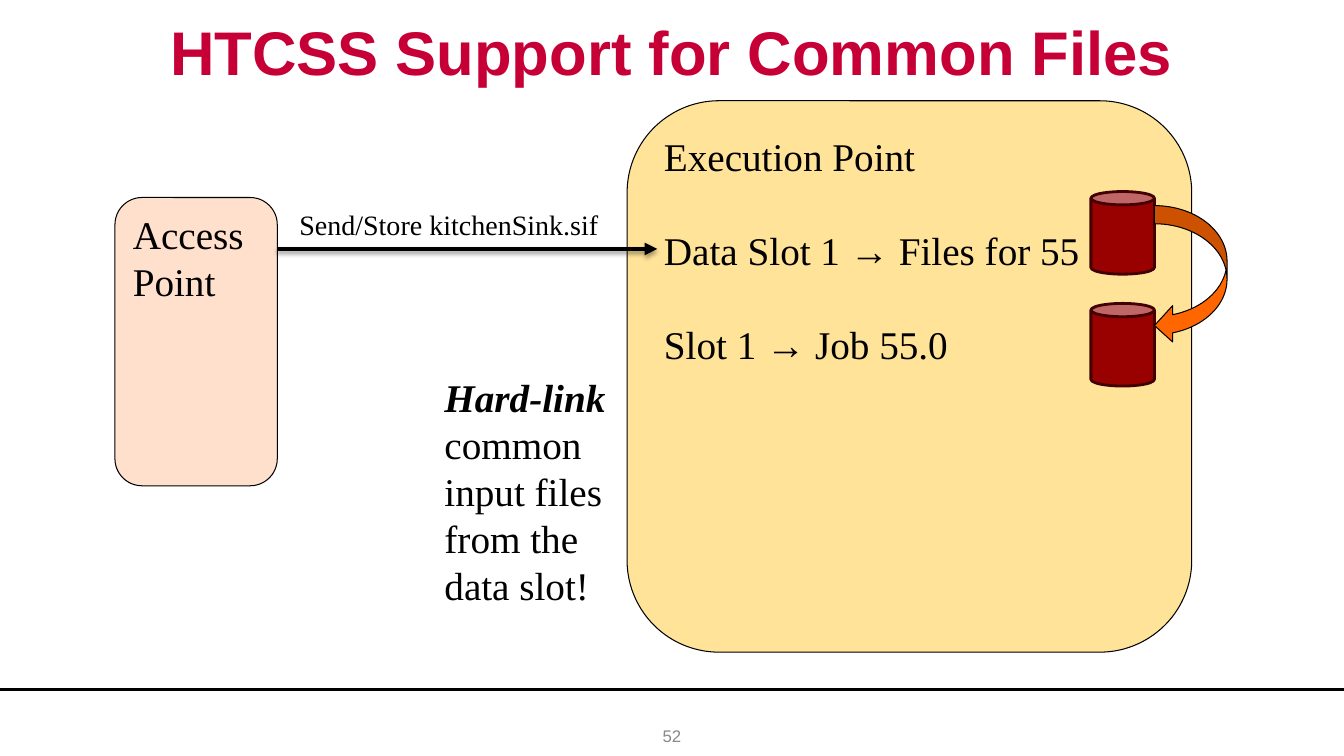
import pptx
import pptx.util
import pptx.dml.color
import pptx.enum.shapes
import pptx.enum.text
import pptx.oxml
import pptx.oxml.ns

Inches = pptx.util.Inches
Pt = pptx.util.Pt
SHAPE = pptx.enum.shapes.MSO_SHAPE
ALIGN = pptx.enum.text.PP_ALIGN
ANCHOR = pptx.enum.text.MSO_ANCHOR

COLORS = {
    "ink": "000000",
    "title": "C60036",
    "number": "898989",
    "access": "FFE0CC",
    "execution": "FFE399",
    "disk": "990000",
    "disk_edge": "430000",
    "link": "FF6600",
}
BODY_LEADING = 1.2


def color(name):
    return pptx.dml.color.RGBColor.from_string(COLORS[name])


def write(frame, paragraphs, size=28, font="Times New Roman", ink="ink", align=ALIGN.LEFT,
          anchor=ANCHOR.TOP, wrap=True, leading=None, gap=0, bold_first=False, bold=False):
    """Fill a text frame; a newline inside a paragraph becomes a line break."""
    frame.word_wrap = wrap
    frame.vertical_anchor = anchor
    for index, text in enumerate(paragraphs):
        paragraph = frame.add_paragraph() if index else frame.paragraphs[0]
        paragraph.text = text
        paragraph.alignment = align
        if leading:
            paragraph.line_spacing = Pt(size * leading)
        if index and gap:
            paragraph.space_before = Pt(gap)
        for run in paragraph.runs:
            lead = bold_first and index == 0
            run.font.size = Pt(size)
            run.font.name = font
            run.font.color.rgb = color(ink)
            run.font.bold = bold or lead
            run.font.italic = lead


class SlideBuilder:
    def __init__(self, slide):
        self.shapes = slide.shapes

    def text(self, left, top, width, height, paragraphs, **style):
        box = self.shapes.add_textbox(Inches(left), Inches(top), Inches(width), Inches(height))
        write(box.text_frame, paragraphs, **style)
        return box

    def shape(self, kind, left, top, width, height, fill, edge="ink", weight=0.75):
        shape = self.shapes.add_shape(
            kind, Inches(left), Inches(top), Inches(width), Inches(height))
        shape.shadow.inherit = False
        shape.fill.solid()
        shape.fill.fore_color.rgb = color(fill)
        shape.line.color.rgb = color(edge)
        shape.line.width = Pt(weight)
        return shape

    def line(self, x1, y1, x2, y2, weight, arrow=False):
        line = self.shapes.add_connector(
            pptx.enum.shapes.MSO_CONNECTOR.STRAIGHT,
            Inches(x1), Inches(y1), Inches(x2), Inches(y2))
        line.line.color.rgb = color("ink")
        line.line.width = Pt(weight)
        namespace = pptx.oxml.ns.nsdecls("a")
        shadow = ""
        if arrow:
            line.line._get_or_add_ln().append(
                pptx.oxml.parse_xml(f'<a:tailEnd {namespace} type="triangle"/>'))
            shadow = (
                f'<a:outerShdw blurRad="{Pt(3.1)}" dist="{Pt(1.8)}" dir="5400000" rotWithShape="0">'
                f'<a:srgbClr val="{COLORS["ink"]}"><a:alpha val="35000"/></a:srgbClr>'
                '</a:outerShdw>')
        line._element.spPr.append(
            pptx.oxml.parse_xml(f"<a:effectLst {namespace}>{shadow}</a:effectLst>"))
        return line


def main():
    deck = pptx.Presentation()
    deck.slide_width, deck.slide_height = Inches(13.33), Inches(7.5)
    page = SlideBuilder(deck.slides.add_slide(deck.slide_layouts[6]))

    # Title and footer
    page.line(0, 6.84, 13.33, 6.84, 2.25)
    page.text(0, 0, 13.33, 1, ["HTCSS Support for Common Files"], size=44, font="Arial",
              ink="title", bold=True, align=ALIGN.CENTER, anchor=ANCHOR.MIDDLE)
    page.text(5.11, 7.1, 3.11, 0.4, ["52"], size=12, font="Arial", ink="number",
              align=ALIGN.CENTER, anchor=ANCHOR.MIDDLE)

    # Access point and execution point
    access = page.shape(SHAPE.ROUNDED_RECTANGLE, 1.14, 1.96, 1.61, 2.86, "access")
    write(access.text_frame, ["Access Point"], leading=BODY_LEADING)
    execution = page.shape(SHAPE.ROUNDED_RECTANGLE, 6.22, 1, 5.6, 5.47, "execution")
    write(execution.text_frame,
          ["Execution Point", "Data Slot 1 → Files for 55", "Slot 1 → Job 55.0"],
          leading=BODY_LEADING, gap=28 * BODY_LEADING)

    # Transfer to the data slot
    page.line(2.75, 2.47, 6.52, 2.47, 3, arrow=True)
    page.text(4.31, 3.65, 1.91, 2.46,
              ["Hard-link", "common\ninput files\nfrom the\ndata slot!"],
              wrap=False, leading=BODY_LEADING, bold_first=True)

    # Disks joined by the hard link
    for disk_top in (1.9, 3.01):
        disk = page.shape(SHAPE.CAN, 10.82, disk_top, 0.63, 0.82, "disk", "disk_edge", 2)
        disk.adjustments[0] = 0.21
    page.shape(SHAPE.CURVED_LEFT_ARROW, 11.45, 2.04, 0.72, 1.37, "link")

    page.text(2.87, 2.01, 3.19, 0.44, ["Send/Store kitchenSink.sif"], size=20,
              leading=BODY_LEADING)

    deck.save("out.pptx")


if __name__ == "__main__":
    main()
